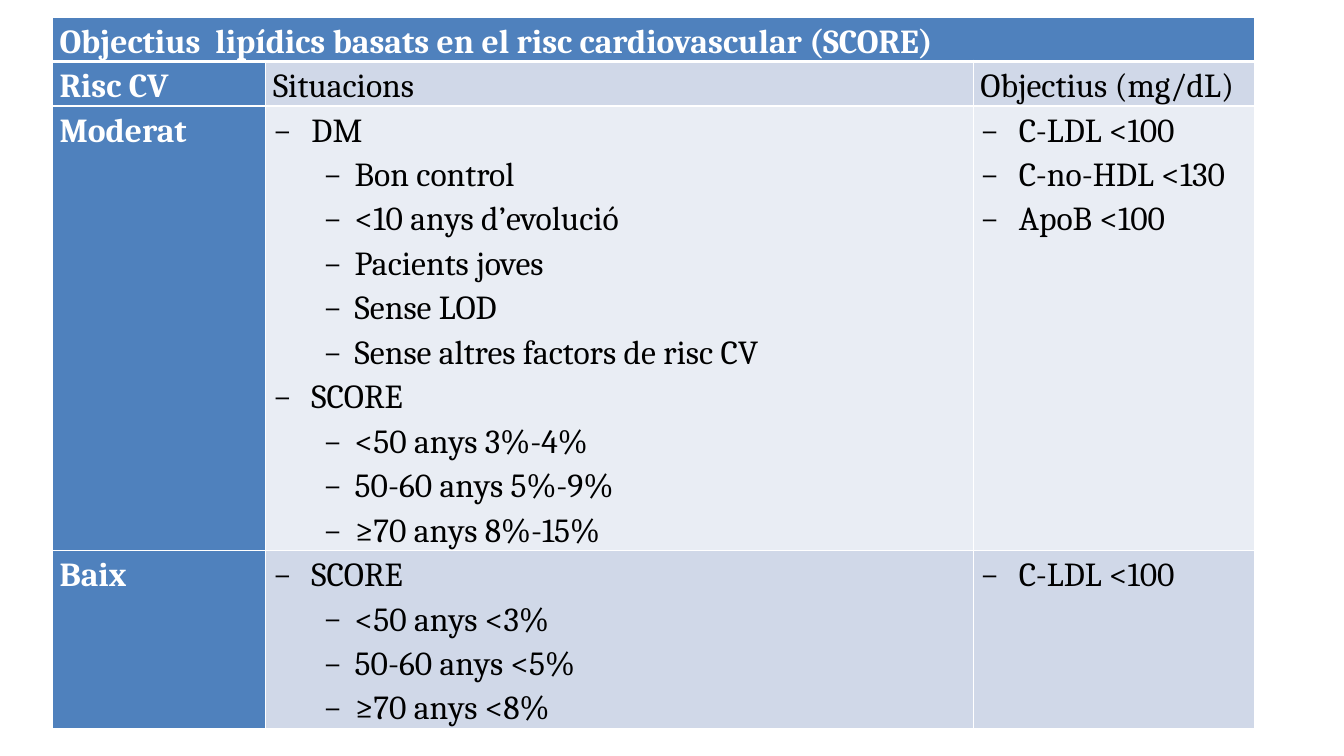
"""Build the slide with the table of lipid targets by cardiovascular risk."""
from dataclasses import dataclass

from lxml.etree import SubElement
from pptx import Presentation
from pptx.dml.color import RGBColor
from pptx.enum.text import PP_ALIGN
from pptx.oxml.ns import qn
from pptx.util import Cm, Pt

COLORS = {"blue": "4F81BD", "mid": "D0D8E8", "pale": "E9EDF4", "white": "FFFFFF", "black": "000000"}
FONT = "Cambria"
COL_WIDTHS = (5.38, 17.83, 7.09)
ROW_HEIGHTS = (0.94, 0.94, 9.93, 3.94)
INDENTS = ((0.97, -0.97), (2.06, -0.79))


@dataclass(frozen=True)
class Line:
    text: str
    level: int | None = None


@dataclass(frozen=True)
class Row:
    fill: str
    cells: tuple[tuple[Line, ...], ...]


def bullets(*texts: str, level: int = 0) -> tuple[Line, ...]:
    return tuple(Line(text, level) for text in texts)


ROWS = (
    Row("blue", ((Line("Objectius  lipídics basats en el risc cardiovascular (SCORE)"),), (), ())),
    Row("mid", ((Line("Risc CV"),), (Line("Situacions"),), (Line("Objectius (mg/dL)"),))),
    Row("pale", (
        (Line("Moderat"),),
        bullets("DM")
        + bullets("Bon control", "<10 anys d’evolució", "Pacients joves", "Sense LOD",
                  "Sense altres factors de risc CV", level=1)
        + bullets("SCORE")
        + bullets("<50 anys 3%-4%", "50-60 anys 5%-9%", "≥70 anys 8%-15%", level=1),
        bullets("C-LDL <100", "C-no-HDL <130", "ApoB <100"),
    )),
    Row("mid", (
        (Line("Baix"),),
        bullets("SCORE") + bullets("<50 anys <3%", "50-60 anys <5%", "≥70 anys <8%", level=1),
        bullets("C-LDL <100"),
    )),
)


def set_borders(cell, top: float, bottom: float) -> None:
    tc_pr = cell._tc.get_or_add_tcPr()
    for tag, width in (("lnL", 1), ("lnR", 1), ("lnT", top), ("lnB", bottom)):
        ln = SubElement(tc_pr, qn(f"a:{tag}"), w=str(Pt(width)))
        fill = SubElement(ln, qn("a:solidFill"))
        SubElement(fill, qn("a:srgbClr"), val=COLORS["white"])


def add_line(p, line: Line, heading: bool) -> None:
    p.line_spacing = 1.15
    if line.level is None:
        p.alignment = PP_ALIGN.JUSTIFY
    else:
        p.level = line.level
        margin, indent = INDENTS[line.level]
        p_pr = p._p.get_or_add_pPr()
        p_pr.set("marL", str(Cm(margin)))
        p_pr.set("indent", str(Cm(indent)))
        SubElement(p_pr, qn("a:buFont"), typeface=FONT)
        SubElement(p_pr, qn("a:buChar"), char="−")
    r = p.add_run()
    r.text = line.text
    r.font.name = FONT
    r.font.size = Pt(24)
    r.font.bold = heading
    r.font.color.rgb = RGBColor.from_string(COLORS["white" if heading else "black"])


def fill_cell(cell, lines: tuple[Line, ...], fill: str, row: int) -> None:
    set_borders(cell, top=3 if row == 1 else 1, bottom=3 if row == 0 else 1)
    cell.fill.solid()
    cell.fill.fore_color.rgb = RGBColor.from_string(COLORS[fill])
    cell.margin_left = cell.margin_right = Cm(0.18)
    cell.margin_top = cell.margin_bottom = 0
    tf = cell.text_frame
    for i, line in enumerate(lines):
        p = tf.add_paragraph() if i else tf.paragraphs[0]
        add_line(p, line, heading=fill == "blue")


def add_targets_table(slide) -> None:
    frame = slide.shapes.add_table(len(ROWS), len(COL_WIDTHS), Cm(1.32), Cm(0.43),
                                   Cm(sum(COL_WIDTHS)), Cm(18.69))
    table = frame.table
    for column, width in zip(table.columns, COL_WIDTHS):
        column.width = Cm(width)
    for table_row, height in zip(table.rows, ROW_HEIGHTS):
        table_row.height = Cm(height)
    frame.height = Cm(18.69)
    for i, row in enumerate(ROWS):
        for j, lines in enumerate(row.cells):
            fill_cell(table.cell(i, j), lines, row.fill if j else "blue", i)
    table.cell(0, 0).merge(table.cell(0, 2))


def main() -> None:
    prs = Presentation()
    prs.slide_width, prs.slide_height = Cm(33.87), Cm(19.05)
    slide = prs.slides.add_slide(prs.slide_layouts[6])
    add_targets_table(slide)
    prs.save("out.pptx")


if __name__ == "__main__":
    main()
